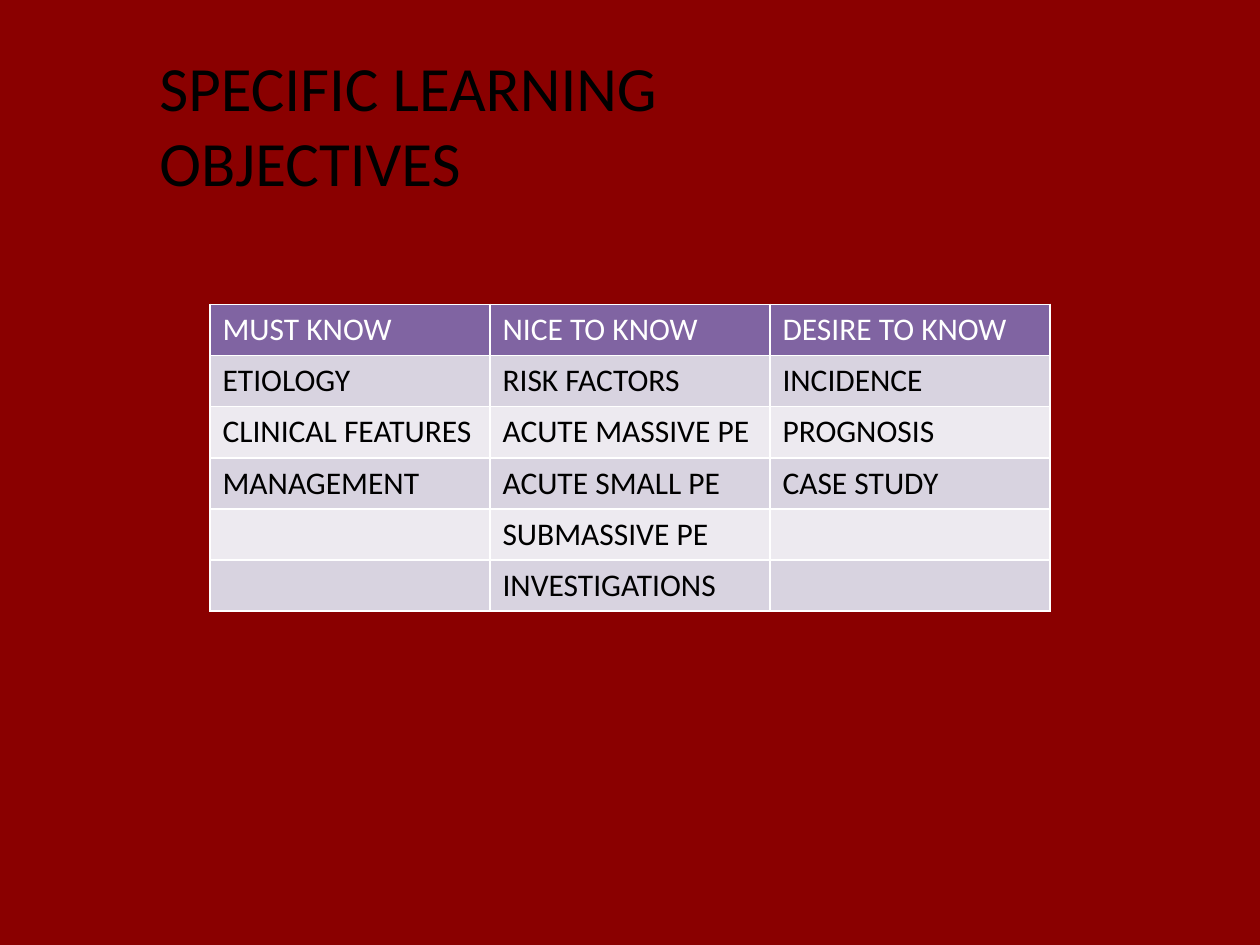
from lxml import etree
from pptx import Presentation, util as u
from pptx.dml.color import RGBColor
from pptx.enum import text
from pptx.oxml import ns

Pt = u.Pt


def rgb(h):
    return RGBColor.from_string(h)


def add_borders(cell, color, width):
    tcPr = cell._tc.get_or_add_tcPr()
    for side in ("lnL", "lnR", "lnT", "lnB"):
        ln = etree.SubElement(tcPr, ns.qn("a:" + side), w=str(Pt(width)))
        fill = etree.SubElement(ln, ns.qn("a:solidFill"))
        etree.SubElement(fill, ns.qn("a:srgbClr"), val=color)


prs = Presentation()
prs.slide_width, prs.slide_height = Pt(720), Pt(540)
s = prs.slides.add_slide(prs.slide_layouts[6])
s.background.fill.solid()
s.background.fill.fore_color.rgb = rgb("8A0000")

# Title
tf = s.shapes.add_textbox(Pt(84), Pt(24), Pt(348), Pt(94.5)).text_frame
tf.word_wrap = True
tf.auto_size = text.MSO_AUTO_SIZE.SHAPE_TO_FIT_TEXT
tf.text = "SPECIFIC LEARNING OBJECTIVES"
font = tf.paragraphs[0].runs[0].font
font.name, font.size = "Calibri", Pt(36)
font.color.rgb = rgb("000000")

# Objectives table
rows = [
    ("MUST KNOW", "NICE TO KNOW", "DESIRE TO KNOW"),
    ("ETIOLOGY", "RISK FACTORS", "INCIDENCE"),
    ("CLINICAL FEATURES", "ACUTE MASSIVE PE", "PROGNOSIS"),
    ("MANAGEMENT", "ACUTE SMALL PE", "CASE STUDY"),
    ("", "SUBMASSIVE PE", ""),
    ("", "INVESTIGATIONS", ""),
]
row_height = 29.2
table = s.shapes.add_table(len(rows), 3, Pt(120), Pt(174), Pt(480),
                           Pt(row_height * len(rows))).table
for i, row in enumerate(rows):
    table.rows[i].height = Pt(row_height)
    band = "8064A2" if i == 0 else ("EDEAF0", "D8D3E0")[i % 2]
    for j, label in enumerate(row):
        cell = table.cell(i, j)
        add_borders(cell, "FFFFFF", 1)
        cell.fill.solid()
        cell.fill.fore_color.rgb = rgb(band)
        p = cell.text_frame.paragraphs[0]
        p.text = label
        for r in p.runs:
            r.font.name, r.font.size, r.font.bold = "Calibri", Pt(18), False
            r.font.color.rgb = rgb("000000" if i else "FFFFFF")

prs.save("out.pptx")
